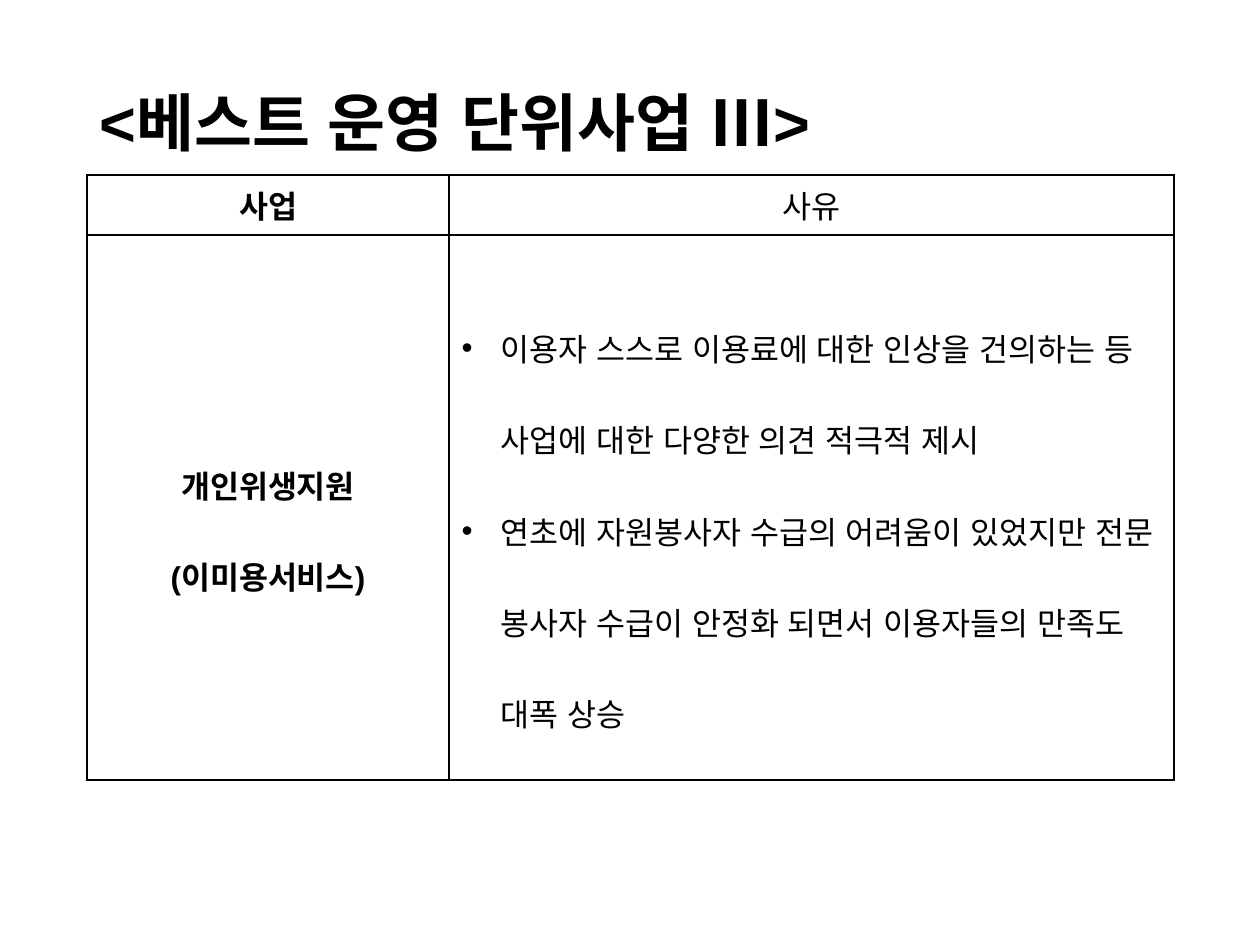
from lxml.etree import SubElement
from pptx import Presentation
from pptx.dml.color import RGBColor
from pptx.enum.lang import MSO_LANGUAGE_ID
from pptx.enum.text import MSO_ANCHOR, PP_ALIGN
from pptx.oxml.ns import qn
from pptx.util import Emu, Pt

TITLE = "<베스트 운영 단위사업 Ⅲ>"
HEADERS = ["사업", "사유"]
PROJECT = ["개인위생지원", "(이미용서비스)"]
REASONS = [
    "이용자 스스로 이용료에 대한 인상을 건의하는 등 사업에 대한 다양한 의견 적극적 제시",
    "연초에 자원봉사자 수급의 어려움이 있었지만 전문 봉사자 수급이 안정화 되면서 "
    "이용자들의 만족도 대폭 상승",
]

BLACK = RGBColor(0, 0, 0)
FONT = "Arial"
PX = 914400 // 126
LEFT, WIDTH = 87, 1087
TITLE_TOP, TITLE_HEIGHT = 77, 89
TABLE_TOP = 175
COLUMNS = [362, 725]
ROWS = [60, 545]
INDENT = 39


def px(count):
    return Emu(count * PX)


def style(paragraph, size, bold):
    font = paragraph.font
    font.name, font.size, font.bold = FONT, Pt(size), bold
    font.color.rgb = BLACK
    for span in paragraph.runs:
        span.font.language_id = MSO_LANGUAGE_ID.KOREAN


def add_bullet(paragraph):
    properties = paragraph._p.get_or_add_pPr()
    properties.set("marL", str(px(INDENT)))
    properties.set("indent", str(-px(INDENT)))
    SubElement(properties, qn("a:buFont")).set("typeface", FONT)
    SubElement(properties, qn("a:buChar")).set("char", "•")


def add_borders(cell):
    properties = cell._tc.get_or_add_tcPr()
    for position, side in enumerate(("a:lnL", "a:lnR", "a:lnT", "a:lnB")):
        line = SubElement(properties, qn(side), w=str(Pt(1)))
        fill = SubElement(line, qn("a:solidFill"))
        SubElement(fill, qn("a:srgbClr")).set("val", str(BLACK))
        properties.insert(position, line)


def fill_cell(cell, lines, bold, spacing=None, bulleted=False):
    cell.fill.background()
    cell.vertical_anchor = MSO_ANCHOR.MIDDLE
    add_borders(cell)
    cell.text_frame.text = "\n".join(lines)
    for paragraph in cell.text_frame.paragraphs:
        paragraph.line_spacing = spacing
        if bulleted:
            add_bullet(paragraph)
        else:
            paragraph.alignment = PP_ALIGN.CENTER
        style(paragraph, 18, bold)


def main():
    deck = Presentation()
    deck.slide_width, deck.slide_height = px(1260), px(945)
    page = deck.slides.add_slide(deck.slide_layouts[5])

    title = page.shapes.title
    title.left, title.top = px(LEFT), px(TITLE_TOP)
    title.width, title.height = px(WIDTH), px(TITLE_HEIGHT)
    title.text_frame.text = TITLE
    title.text_frame.vertical_anchor = MSO_ANCHOR.MIDDLE
    heading = title.text_frame.paragraphs[0]
    heading.alignment = PP_ALIGN.LEFT
    style(heading, 36, True)

    table = page.shapes.add_table(
        len(ROWS), len(COLUMNS), px(LEFT), px(TABLE_TOP), px(WIDTH), px(sum(ROWS))
    ).table
    table.first_row = table.horz_banding = False
    for column, width in zip(table.columns, COLUMNS):
        column.width = px(width)
    for row, height in zip(table.rows, ROWS):
        row.height = px(height)

    for index, header in enumerate(HEADERS):
        fill_cell(table.cell(0, index), [header], bold=index == 0)
    fill_cell(table.cell(1, 0), PROJECT, bold=True, spacing=2)
    fill_cell(table.cell(1, 1), REASONS, bold=False, spacing=2, bulleted=True)

    deck.save("out.pptx")


if __name__ == "__main__":
    main()
